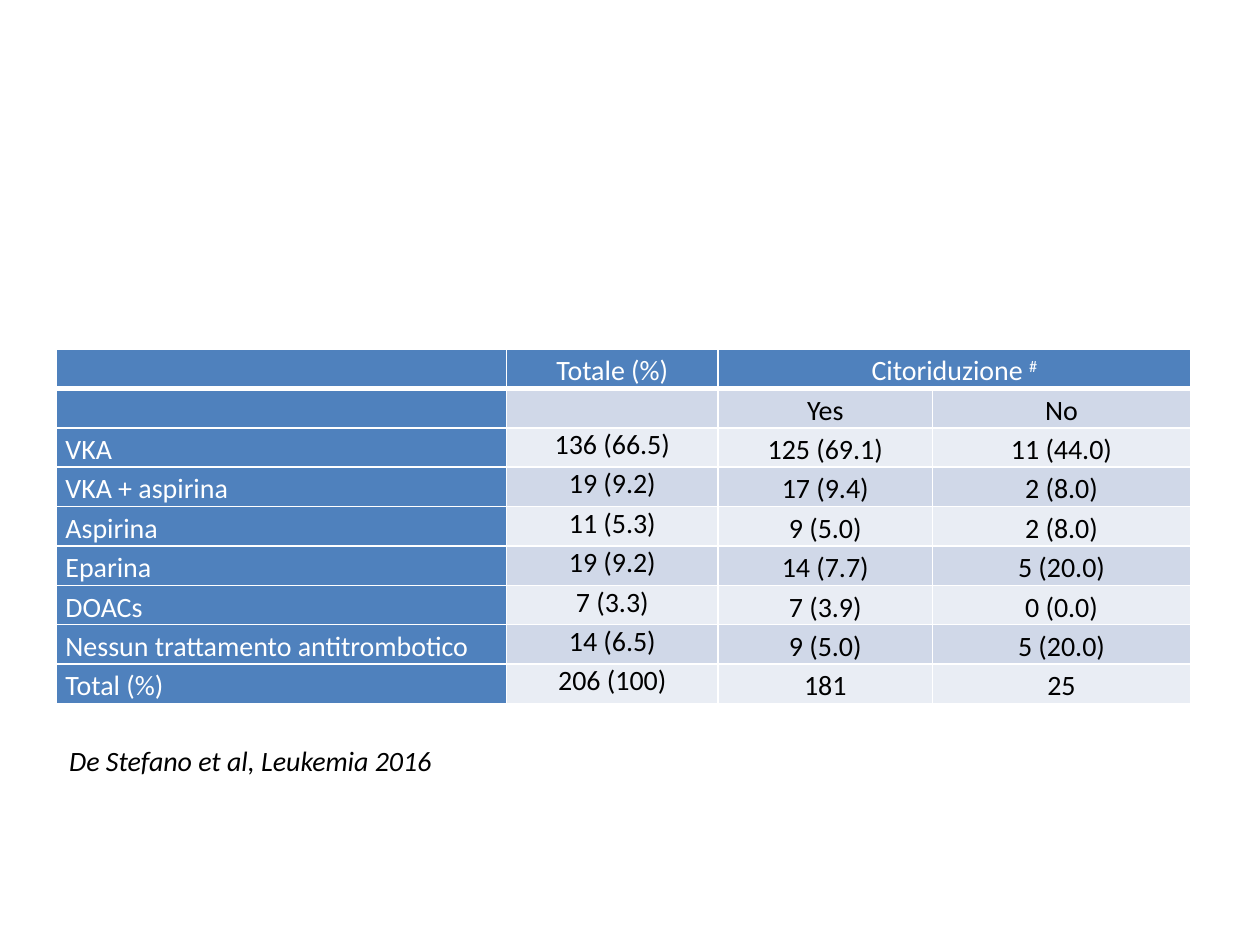
from dataclasses import dataclass

from pptx import Presentation
from pptx.dml.color import RGBColor
from pptx.enum.text import MSO_AUTO_SIZE, PP_ALIGN
from pptx.oxml import parse_xml
from pptx.oxml.ns import nsdecls
from pptx.util import Inches, Pt

LEFT, CENTER = PP_ALIGN.LEFT, PP_ALIGN.CENTER
FIT_SHAPE = MSO_AUTO_SIZE.SHAPE_TO_FIT_TEXT
BLANK_LAYOUT = 6


@dataclass(frozen=True)
class Theme:
    font: str = "Calibri"
    size: float = 16
    header: str = "4F81BD"
    bands: tuple = ("E9EDF4", "D0D8E8")
    light: str = "FFFFFF"
    dark: str = "000000"
    border: float = 1
    header_border: float = 3


THEME = Theme()

COLUMN_WIDTHS = (3.57, 1.68, 1.7, 2.05)
ROW_HEIGHT = 0.31
ROWS = (
    ("", "Totale (%)", "Citoriduzione ", ""),
    ("", "", "Yes", "No"),
    ("VKA", "136 (66.5)", "125 (69.1)", "11 (44.0)"),
    ("VKA + aspirina", "19 (9.2)", "17 (9.4)", "2 (8.0)"),
    ("Aspirina", "11 (5.3)", "9 (5.0)", "2 (8.0)"),
    ("Eparina", "19 (9.2)", "14 (7.7)", "5 (20.0)"),
    ("DOACs", "7 (3.3)", "7 (3.9)", "0 (0.0)"),
    ("Nessun trattamento antitrombotico", "14 (6.5)", "9 (5.0)", "5 (20.0)"),
    ("Total (%)", "206 (100)", "181", "25"),
)


def add_span(para, text, color, italic=False):
    span = para.add_run()
    span.text = text
    span.font.name = THEME.font
    span.font.size = Pt(THEME.size)
    span.font.italic = italic
    span.font.color.rgb = RGBColor.from_string(color)
    return span


def set_borders(cell, bottom):
    """Draw the four cell borders; they must come before the fill in the XML."""
    properties = cell._tc.get_or_add_tcPr()
    widths = {"lnL": THEME.border, "lnR": THEME.border, "lnT": THEME.border, "lnB": bottom}
    for index, (side, width) in enumerate(widths.items()):
        properties.insert(index, parse_xml(
            f'<a:{side} {nsdecls("a")} w="{Pt(width)}"><a:solidFill>'
            f'<a:srgbClr val="{THEME.light}"/></a:solidFill></a:{side}>'))


def format_cell(cell, row, column, text):
    on_header = row == 0 or column == 0
    fill = THEME.header if on_header else THEME.bands[row % 2]
    cell.fill.solid()
    cell.fill.fore_color.rgb = RGBColor.from_string(fill)
    set_borders(cell, THEME.header_border if row == 0 else THEME.border)
    cell.margin_left = cell.margin_right = Inches(0.07)
    cell.margin_top = cell.margin_bottom = 0
    if not text:
        return
    para = cell.text_frame.paragraphs[0]
    para.alignment = LEFT if column == 0 else CENTER
    is_total_value = column == 1 and row > 0
    para.line_spacing = 1.0 if is_total_value else 1.15
    para.space_after = Pt(10)
    add_span(para, text, THEME.light if on_header else THEME.dark)


def add_treatment_table(page, left, top):
    frame = page.shapes.add_table(
        len(ROWS), len(COLUMN_WIDTHS), Inches(left), Inches(top),
        Inches(sum(COLUMN_WIDTHS)), Inches(ROW_HEIGHT * len(ROWS)))
    table = frame.table
    for column, width in zip(table.columns, COLUMN_WIDTHS):
        column.width = Inches(width)
    for row in table.rows:
        row.height = Inches(ROW_HEIGHT)
    for row, texts in enumerate(ROWS):
        for column, text in enumerate(texts):
            format_cell(table.cell(row, column), row, column, text)
    cytoreduction = table.cell(0, 2)
    cytoreduction.merge(table.cell(0, 3))
    mark = add_span(cytoreduction.text_frame.paragraphs[0], "#", THEME.light)
    mark._r.get_or_add_rPr().set("baseline", "30000")


def add_citation(page, left, top, width, height):
    box = page.shapes.add_textbox(
        Inches(left), Inches(top), Inches(width), Inches(height))
    box.text_frame.word_wrap = False
    box.text_frame.auto_size = FIT_SHAPE
    add_span(box.text_frame.paragraphs[0], "De Stefano et al, Leukemia 2016",
             THEME.dark, italic=True)


def main():
    deck = Presentation()
    deck.slide_width, deck.slide_height = Inches(10), Inches(7.5)
    page = deck.slides.add_slide(deck.slide_layouts[BLANK_LAYOUT])
    add_treatment_table(page, 0.45, 2.77)
    add_citation(page, 0.45, 5.85, 3.12, 0.37)
    deck.save("out.pptx")


if __name__ == "__main__":
    main()
